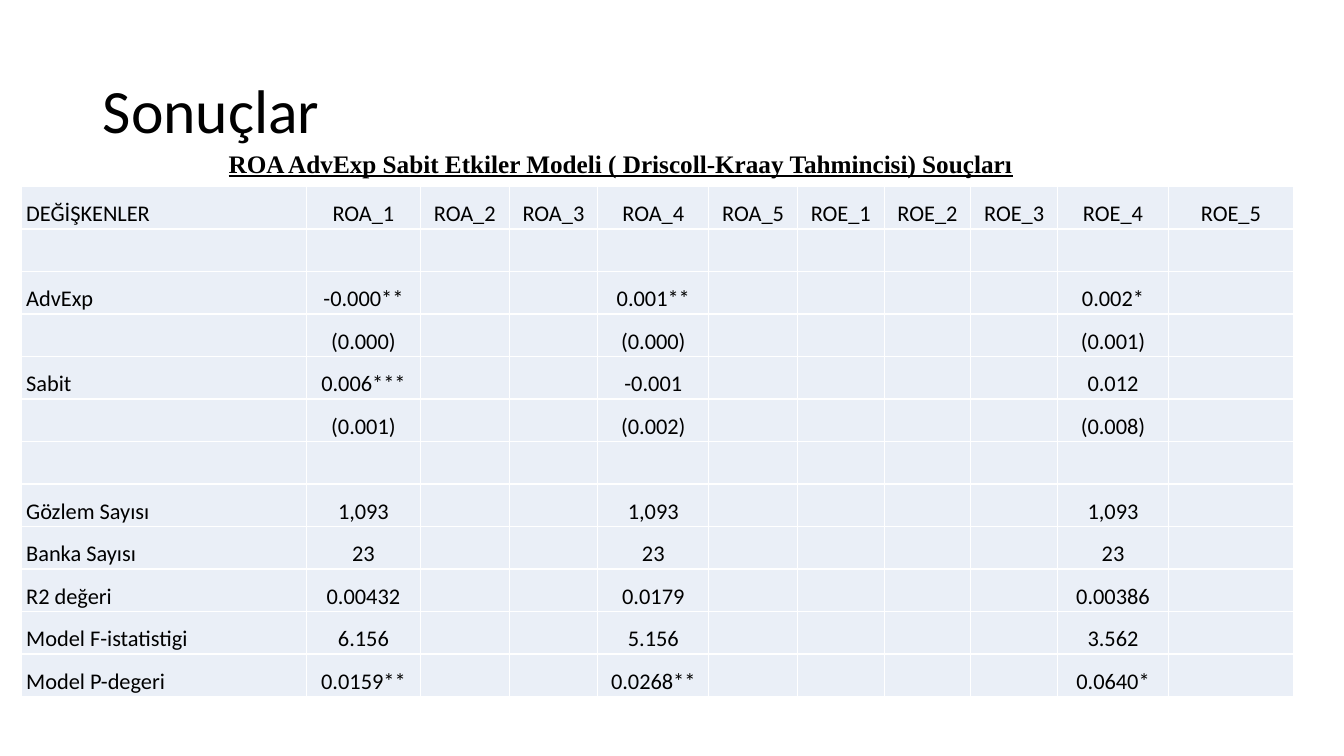
import pptx
import pptx.util
import pptx.dml.color
import pptx.enum.text

Inches = pptx.util.Inches
Align = pptx.enum.text.PP_ALIGN
Anchor = pptx.enum.text.MSO_ANCHOR
BLACK = pptx.dml.color.RGBColor(0x00, 0x00, 0x00)
PALE = pptx.dml.color.RGBColor(0xEA, 0xEF, 0xF7)

WIDTHS = [2.83, 1.13, 0.88, 0.88, 1.1, 0.88, 0.86, 0.86, 0.86, 1.1, 1.24]
HEADS = ["DEĞİŞKENLER"] + [f"{name}_{n}" for name in ("ROA", "ROE") for n in range(1, 6)]
FILLED = (0, 1, 4, 9)
ROWS = [
    (),
    ("AdvExp", "-0.000**", "0.001**", "0.002*"),
    ("", "(0.000)", "(0.000)", "(0.001)"),
    ("Sabit", "0.006***", "-0.001", "0.012"),
    ("", "(0.001)", "(0.002)", "(0.008)"),
    (),
    ("Gözlem Sayısı", "1,093", "1,093", "1,093"),
    ("Banka Sayısı", "23", "23", "23"),
    ("R2 değeri", "0.00432", "0.0179", "0.00386"),
    ("Model F-istatistigi", "6.156", "5.156", "3.562"),
    ("Model P-degeri", "0.0159**", "0.0268**", "0.0640*"),
]


def style(para, face, size):
    """Set the font of a whole paragraph."""
    para.font.name = face
    para.font.size = pptx.util.Pt(size)
    para.font.color.rgb = BLACK


def add_title(slide, left, top, width, height):
    """Place the slide title in the given box."""
    title = slide.shapes.title
    title.left, title.top = Inches(left), Inches(top)
    title.width, title.height = Inches(width), Inches(height)
    title.text_frame.text = "Sonuçlar"
    title.text_frame.vertical_anchor = Anchor.MIDDLE
    para = title.text_frame.paragraphs[0]
    para.alignment = Align.LEFT
    para.line_spacing = 0.9
    style(para, "Calibri", 44)


def add_label(slide, left, top, width, height):
    """Place the underlined table heading in the given box."""
    box = slide.shapes.add_textbox(Inches(left), Inches(top), Inches(width), Inches(height))
    box.text_frame.word_wrap = True
    para = box.text_frame.paragraphs[0]
    para.text = "ROA AdvExp Sabit Etkiler Modeli ( Driscoll-Kraay Tahmincisi) Souçları"
    style(para, "Times New Roman", 18)
    para.font.bold = True
    para.font.underline = True


def fill_cell(cell, text, align):
    """Format one table cell and write its text."""
    cell.fill.solid()
    cell.fill.fore_color.rgb = PALE
    cell.margin_left = cell.margin_right = Inches(0.05)
    cell.margin_top = cell.margin_bottom = 0
    if text:
        para = cell.text_frame.paragraphs[0]
        para.text = text
        para.alignment = align
        para.line_spacing = 1.5
        style(para, "Calibri", 16)


def add_results(slide, left, top, width, height):
    """Place the table of model results in the given box."""
    frame = slide.shapes.add_table(len(ROWS) + 1, len(HEADS), Inches(left), Inches(top),
                                   Inches(width), Inches(height))
    table = frame.table
    table.first_row = table.horz_banding = False
    for column, size in zip(table.columns, WIDTHS):
        column.width = Inches(size)
    lines = [dict(enumerate(HEADS))] + [dict(zip(FILLED, row)) for row in ROWS]
    for r, line in enumerate(lines):
        for c in range(len(HEADS)):
            align = Align.CENTER if c else Align.JUSTIFY
            fill_cell(table.cell(r, c), line.get(c, ""), align)


def main():
    """Build the slide and save it."""
    deck = pptx.Presentation()
    deck.slide_width, deck.slide_height = Inches(13.33), Inches(7.5)
    slide = deck.slides.add_slide(deck.slide_layouts[5])
    add_title(slide, 0.92, 0.4, 11.5, 1.45)
    add_results(slide, 0.21, 1.85, sum(WIDTHS), 5.06)
    add_label(slide, 2.17, 1.42, 9.45, 0.4)
    deck.save("out.pptx")


if __name__ == "__main__":
    main()
